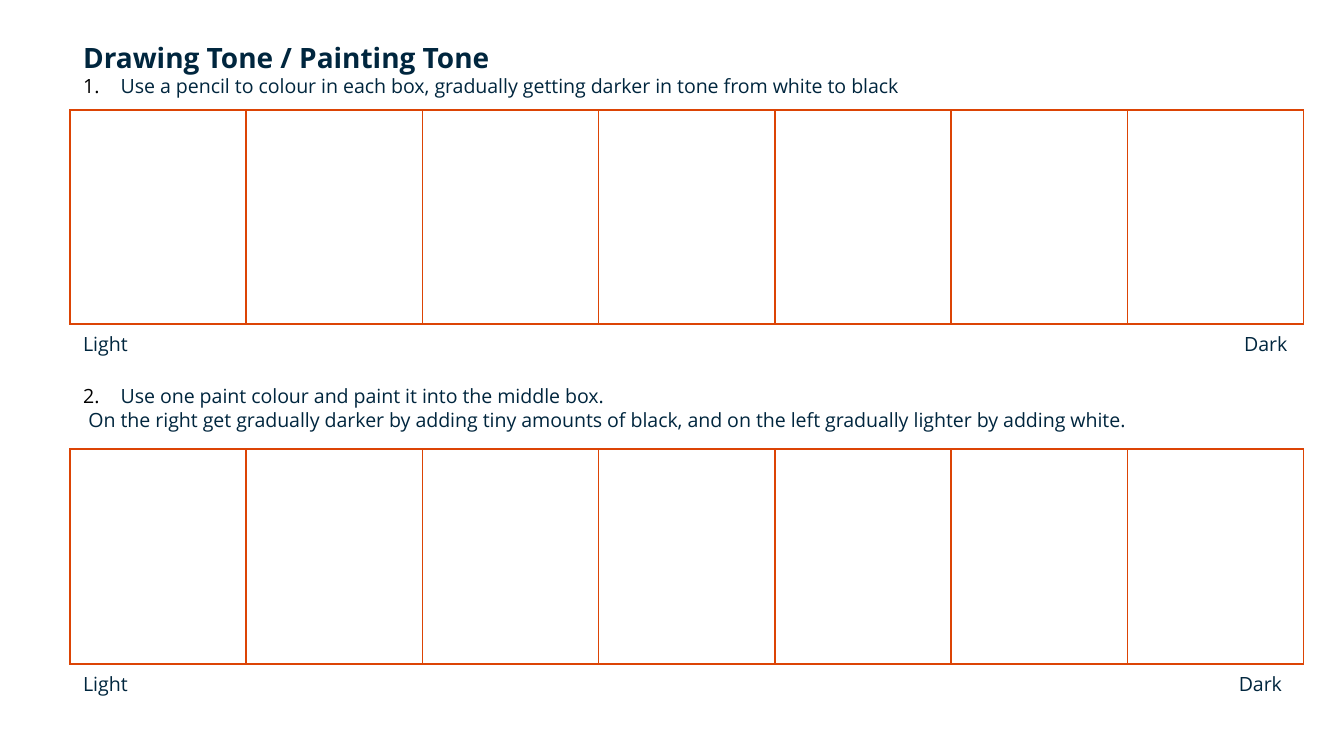
import pptx
import pptx.dml.color
import pptx.enum.text
import pptx.oxml
import pptx.oxml.ns
import pptx.util

Inches = pptx.util.Inches
Pt = pptx.util.Pt
RGBColor = pptx.dml.color.RGBColor

NAVY = RGBColor(0x00, 0x26, 0x3E)
ORANGE = RGBColor(0xDC, 0x44, 0x05)
BLACK = RGBColor(0x00, 0x00, 0x00)
FONT = "Open Sans"
LEFT = 0.52
WIDTH = 9.18
BOXES = 7
SOLID = 100
FAINT = 35


def drawing_element(markup):
    namespace = pptx.oxml.ns.nsdecls("a")
    return pptx.oxml.parse_xml(markup.replace(">", f" {namespace}>", 1))


def add_text(page, left, top, width, height, lines):
    box = page.shapes.add_textbox(Inches(left), Inches(top), Inches(width), Inches(height))
    frame = box.text_frame
    frame.word_wrap = True
    frame.auto_size = pptx.enum.text.MSO_AUTO_SIZE.SHAPE_TO_FIT_TEXT
    frame.text = "\n".join(lines)
    for para in frame.paragraphs:
        for span in para.runs:
            span.font.name = FONT
            span.font.size = Pt(10.5)
            span.font.color.rgb = NAVY
    return frame


def number_paragraph(para, number):
    properties = para._p.get_or_add_pPr()
    properties.set("marL", str(Inches(0.28)))
    properties.set("indent", str(Inches(-0.28)))
    for markup in (
        f'<a:buClr><a:srgbClr val="{BLACK}"/></a:buClr>',
        f'<a:buFont typeface="{FONT}"></a:buFont>',
        f'<a:buAutoNum type="arabicPeriod" startAt="{number}"></a:buAutoNum>',
    ):
        properties.append(drawing_element(markup))


def add_heading(page, left, top, width, height):
    frame = add_text(page, left, top, width, height, [
        "Drawing Tone / Painting Tone",
        "Use a pencil to colour in each box, gradually getting darker in tone from white to black",
    ])
    title, step = frame.paragraphs
    title.runs[0].font.size = Pt(15)
    title.runs[0].font.bold = True
    number_paragraph(step, 1)


def add_paint_step(page, left, top, width, height):
    frame = add_text(page, left, top, width, height, [
        "Use one paint colour and paint it into the middle box.",
        "On the right get gradually darker by adding tiny amounts of black, "
        "and on the left gradually lighter by adding white.",
    ])
    step, detail = frame.paragraphs
    number_paragraph(step, 2)
    detail._p.get_or_add_pPr().set("marL", str(Inches(0.04)))


def set_borders(cell, opacities):
    properties = cell._tc.get_or_add_tcPr()
    for position, (side, opacity) in enumerate(opacities.items()):
        properties.insert(position, drawing_element(
            f'<a:ln{side} w="{Pt(1)}"><a:solidFill><a:srgbClr val="{ORANGE}">'
            f'<a:alpha val="{opacity * 1000}"/></a:srgbClr></a:solidFill></a:ln{side}>'
        ))


def add_tone_scale(page, left, top, width, height, dark_edge):
    frame = page.shapes.add_table(
        1, BOXES, Inches(left), Inches(top), Inches(width), Inches(height))
    table = frame.table
    table.first_row = False
    table.horz_banding = False
    edges = [FAINT, *[SOLID] * (BOXES - 1), FAINT]
    for index in range(BOXES):
        table.columns[index].width = Inches(width / BOXES)
        cell = table.cell(0, index)
        cell.fill.background()
        set_borders(cell, {
            "L": edges[index], "R": edges[index + 1], "T": FAINT, "B": FAINT})

    labels = add_text(page, left, top + height + 0.01, width, 0.28, ["Light\tDark"])
    labels.paragraphs[0]._p.get_or_add_pPr().append(drawing_element(
        f'<a:tabLst><a:tab pos="{Inches(dark_edge)}" algn="r"/></a:tabLst>'))


def main():
    deck = pptx.Presentation()
    deck.slide_width = Inches(10)
    deck.slide_height = deck.slide_width * 9 // 16
    page = deck.slides.add_slide(deck.slide_layouts[6])
    add_heading(page, LEFT, 0.25, 8.8, 0.53)
    add_tone_scale(page, LEFT, 0.82, WIDTH, 1.59, 8.96)
    add_paint_step(page, LEFT, 2.81, 8.97, 0.45)
    add_tone_scale(page, LEFT, 3.34, WIDTH, 1.6, 8.92)
    deck.save("out.pptx")


if __name__ == "__main__":
    main()
